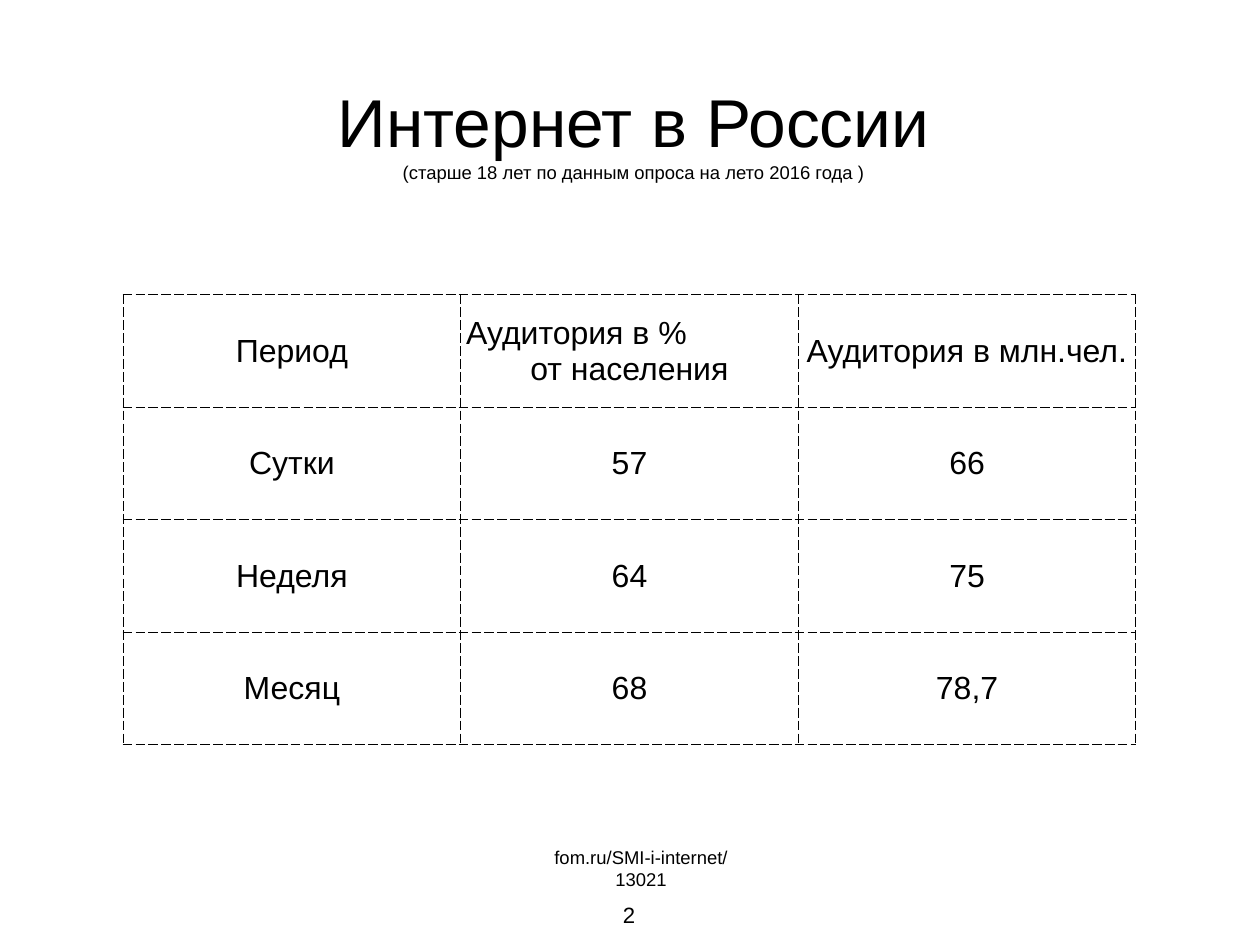
from dataclasses import dataclass

from lxml import etree
from pptx import Presentation
from pptx.dml.color import RGBColor
from pptx.enum.text import MSO_ANCHOR, MSO_AUTO_SIZE, PP_ALIGN
from pptx.oxml.ns import qn
from pptx.util import Inches, Pt

LEFT, CENTER = PP_ALIGN.LEFT, PP_ALIGN.CENTER
TOP, MIDDLE = MSO_ANCHOR.TOP, MSO_ANCHOR.MIDDLE
GROW = MSO_AUTO_SIZE.SHAPE_TO_FIT_TEXT


@dataclass(frozen=True)
class Theme:
    font: str = "Arial"
    ink: RGBColor = RGBColor(0, 0, 0)
    title: int = 55
    note: int = 15
    number: int = 18
    table: int = 26
    border: int = 1
    inset: float = 0.06


THEME = Theme()
COLUMN, ROW = Inches(3.81), Inches(1.27)
ROWS = [
    ["Период", "Аудитория в %\nот населения", "Аудитория в млн.чел."],
    ["Сутки", "57", "66"],
    ["Неделя", "64", "75"],
    ["Месяц", "68", "78,7"],
]


def set_insets(target):
    target.margin_left = target.margin_right = Inches(THEME.inset)
    target.margin_top = target.margin_bottom = Inches(THEME.inset)


def style_paragraph(p, size, align=CENTER):
    p.alignment = align
    for r in p.runs:
        r.font.name = THEME.font
        r.font.size = Pt(size)
        r.font.color.rgb = THEME.ink


def fill_frame(tf, text, sizes, anchor=MIDDLE):
    set_insets(tf)
    tf.word_wrap = False
    tf.auto_size = GROW
    tf.vertical_anchor = anchor
    tf.text = text
    for p, size in zip(tf.paragraphs, sizes):
        p.line_spacing = 1.0
        p.space_before = Pt(0)
        style_paragraph(p, size)


def add_title(s, text, left, top, width, height):
    sp = s.shapes.title
    sp.left, sp.top, sp.width, sp.height = map(Inches, (left, top, width, height))
    fill_frame(sp.text_frame, text, [THEME.title, THEME.note])


def add_label(s, text, size, left, top, width, height, anchor=MIDDLE):
    sp = s.shapes.add_textbox(*map(Inches, (left, top, width, height)))
    fill_frame(sp.text_frame, text, [size], anchor)


def add_borders(cell):
    tcPr = cell._tc.get_or_add_tcPr()
    for position, side in enumerate(("lnL", "lnR", "lnT", "lnB")):
        ln = etree.Element(qn(f"a:{side}"), w=str(Pt(THEME.border)))
        fill = etree.SubElement(ln, qn("a:solidFill"))
        etree.SubElement(fill, qn("a:srgbClr"), val=str(THEME.ink))
        etree.SubElement(ln, qn("a:prstDash"), val="dash")
        tcPr.insert(position, ln)


def fill_cell(cell, text):
    set_insets(cell)
    cell.vertical_anchor = MIDDLE
    cell.fill.background()
    cell.text = text
    paragraphs = cell.text_frame.paragraphs
    for p in paragraphs:
        style_paragraph(p, THEME.table, CENTER if p is paragraphs[-1] else LEFT)
    add_borders(cell)


def add_audience_table(s, left, top):
    rows, columns = len(ROWS), len(ROWS[0])
    frame = s.shapes.add_table(rows, columns, Inches(left), Inches(top),
                               COLUMN * columns, ROW * rows)
    table = frame.table
    table.first_row = table.horz_banding = False
    for column in table.columns:
        column.width = COLUMN
    for row, texts in zip(table.rows, ROWS):
        row.height = ROW
        for cell, text in zip(row.cells, texts):
            fill_cell(cell, text)


def main():
    prs = Presentation()
    prs.slide_width, prs.slide_height = Inches(14.22), Inches(10.67)
    s = prs.slides.add_slide(prs.slide_layouts[5])
    add_label(s, "2", THEME.number, 6.97, 10.12, 0.26, 0.42, TOP)
    add_title(s, "Интернет в России\n(старше 18 лет по данным опроса на лето 2016 года )",
              3.67, 0.85, 6.96, 1.28)
    add_label(s, "fom.ru/SMI-i-internet/13021", THEME.note, 5.91, 9.62, 2.65, 0.36)
    add_audience_table(s, 1.39, 3.33)
    prs.save("out.pptx")


if __name__ == "__main__":
    main()
